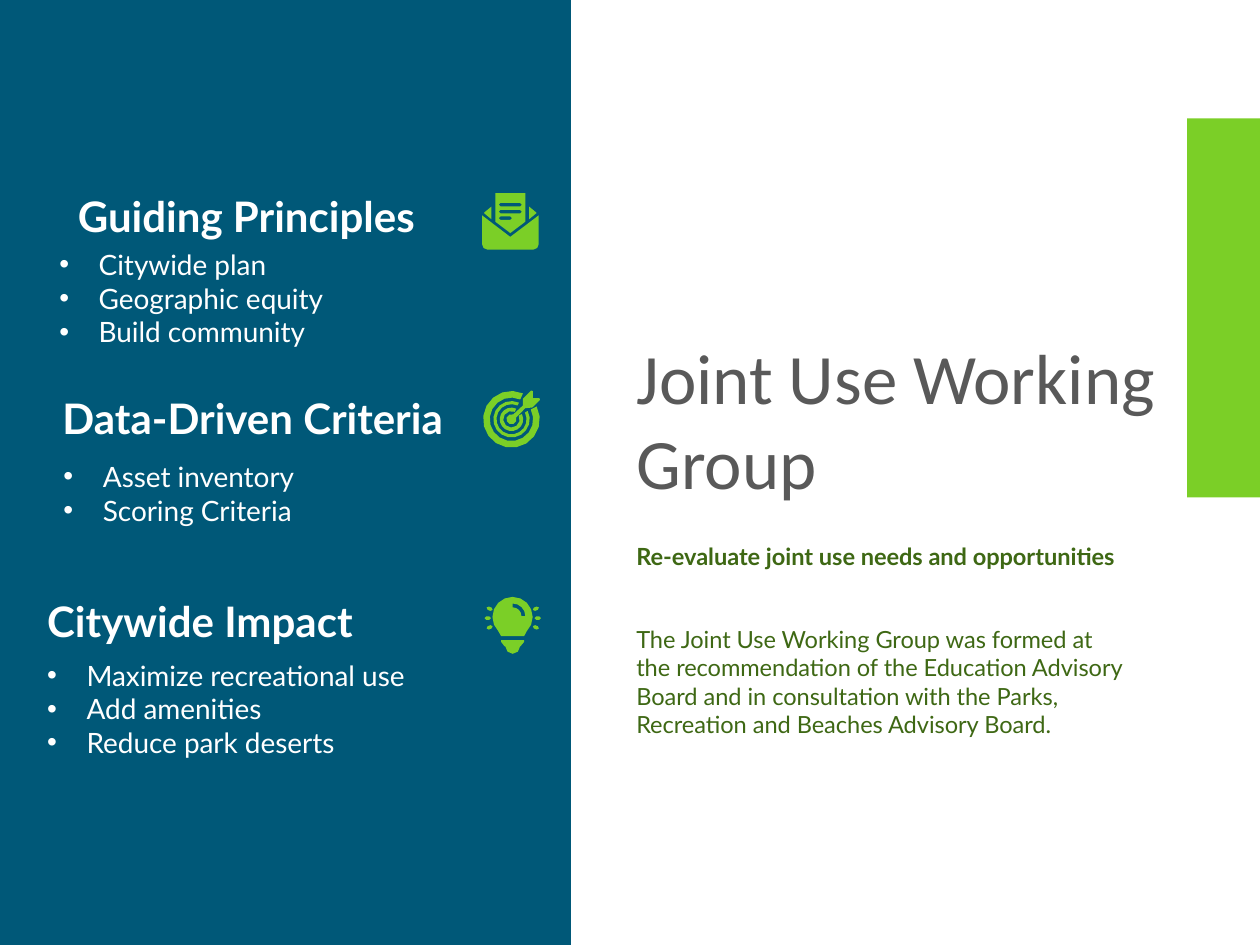
import math

import lxml.etree
import pptx
import pptx.dml.color
import pptx.enum.shapes
import pptx.enum.text
import pptx.oxml.ns
import pptx.util

Pt = pptx.util.Pt
rgb = pptx.dml.color.RGBColor.from_string
LEFT = pptx.enum.text.PP_ALIGN.LEFT
RIGHT = pptx.enum.text.PP_ALIGN.RIGHT
NAVY, GREEN, DARK_GREEN, GREY, WHITE = "005878", "7BCF27", "3E6814", "595959", "FFFFFF"


def arc(x, y, radius, start, end):
    step_angle = 90 if radius < 2 else 45 if radius < 5 else 22.5
    steps = math.ceil(abs(end - start) / step_angle)
    angles = [math.radians(start + (end - start) * step / steps) for step in range(steps + 1)]
    return [(x + radius * math.cos(angle), y + radius * math.sin(angle)) for angle in angles]


def fill_text(shape, box, lines, size, color, font="Lato", bold=False, align=LEFT, bullets=False):
    shape.left, shape.top, shape.width, shape.height = [Pt(length) for length in box]
    frame = shape.text_frame
    frame.word_wrap = True
    frame.vertical_anchor = pptx.enum.text.MSO_ANCHOR.TOP
    frame.text = "\n".join(lines)
    for paragraph in frame.paragraphs:
        paragraph.alignment = align
        if bullets:
            properties = paragraph._p.get_or_add_pPr()
            properties.set("marL", str(Pt(22.5)))
            properties.set("indent", str(Pt(-22.5)))
            for tag, name, value in [("a:buFont", "typeface", "Arial"), ("a:buChar", "char", "•")]:
                lxml.etree.SubElement(properties, pptx.oxml.ns.qn(tag)).set(name, value)
        paragraph.font.name = font
        paragraph.font.size = Pt(size)
        paragraph.font.bold = bold
        paragraph.font.color.rgb = rgb(color)


presentation = pptx.Presentation()
presentation.slide_width = Pt(720)
presentation.slide_height = Pt(540)
slide = presentation.slides.add_slide(presentation.slide_layouts[5])

for box, color in [((0, 0, 326.2, 540), NAVY), ((678.3, 67.6, 41.7, 216.6), GREEN)]:
    panel = slide.shapes.add_shape(
        pptx.enum.shapes.MSO_SHAPE.RECTANGLE, *[Pt(length) for length in box])
    panel.shadow.inherit = False
    panel.fill.solid()
    panel.fill.fore_color.rgb = rgb(color)
    panel.line.fill.background()

fill_text(slide.shapes.title, (356.5, 187.2, 332.6, 105.2),
          ["Joint Use Working Group"], 40.5, GREY, font="Calibri")

statements = [
    ((356.5, 306, 345.6, 23.8), "Re-evaluate joint use needs and opportunities", True),
    ((356.5, 353.5, 293.8, 72.7),
     "The Joint Use Working Group was formed at the recommendation of the Education Advisory "
     "Board and in consultation with the Parks, Recreation and Beaches Advisory Board.", False),
]
for box, text, bold in statements:
    fill_text(slide.shapes.add_textbox(0, 0, 0, 0), box, [text], 13.5, DARK_GREEN, bold=bold)

topics = [
    ("Guiding Principles", (-3.6, 105.5, 247.7, 36), RIGHT,
     ["Citywide plan", "Geographic equity", "Build community"], (26.8, 137.9, 193, 65.5)),
    ("Data-Driven Criteria", (-10.6, 220.6, 270.7, 36), RIGHT,
     ["Asset inventory", "Scoring Criteria"], (29.2, 259, 171.4, 46)),
    ("Citywide Impact", (19.9, 337, 310.3, 36), LEFT,
     ["Maximize recreational use", "Add amenities", "Reduce park deserts"],
     (19.9, 372.6, 240.5, 65.5)),
]
for heading, heading_box, align, items, items_box in topics:
    fill_text(slide.shapes.add_textbox(0, 0, 0, 0), heading_box, [heading], 24, WHITE,
              bold=True, align=align)
    fill_text(slide.shapes.add_textbox(0, 0, 0, 0), items_box, items, 16, WHITE, bullets=True)

letter_lines = [
    arc(286, y, 1, 90, 270) + arc(right, y, 1, -90, 90)
    for y, right in [(117, 297.2), (121, 297.2), (124.7, 291.6)]
]
envelope = [
    [[(275.5, 123.1), (291.6, 135.4), (307.8, 123.1)]
     + arc(304.9, 139.7, 2.9, 0, 90) + arc(278.4, 139.7, 2.9, 90, 180)],
    [[(302.4, 118.1), (302.4, 125.3), (306.7, 121.7)]],
    [[(280.8, 118.1), (280.8, 125.3), (276.5, 121.7)]],
    [[(283, 110.4), (300.2, 110.4), (300.2, 126.7), (291.6, 133.2), (283, 126.7)]]
    + letter_lines,
]

target = [
    [arc(292.3, 239.6, outer, -27, 294) + arc(292.3, 239.6, inner, 294, -27)]
    for outer, inner in [(16.2, 12.4), (10.4, 8.6), (6.7, 4.7)]
]
target.append([
    arc(292.3, 239.6, 2.9, -20, 290)
    + [(298.8, 231.8), (298.8, 227.9), (303.5, 223.2), (304.6, 223.5), (304.6, 227.5),
       (308.3, 227.5), (308.6, 228.6), (304.2, 232.9), (300.2, 233.3)]
])

bulb = [
    [arc(292.9, 352.6, 11.5, 135, 405) + [(299.5, 363.6), (286.4, 363.6)],
     arc(293, 352.1, 7.2, -90, 0) + arc(293, 352.1, 5, 0, -90)],
    [[(286.4, 365.8), (299.5, 365.8), (299.5, 366.8), (297.4, 369.4)]
     + arc(293, 369.4, 4.2, 0, 180) + [(288.4, 369.4), (286.4, 366.8)]],
]
for angle in (-22, 0, 22, 158, 180, 202):
    across, down = math.cos(math.radians(angle)), math.sin(math.radians(angle))
    bulb.append([
        arc(293 + 13.4 * across, 353.2 + 13.4 * down, 1, angle + 90, angle + 270)
        + arc(293 + 15.1 * across, 353.2 + 15.1 * down, 1, angle - 90, angle + 90)
    ])

for icon in (envelope, target, bulb):
    group = slide.shapes.add_group_shape()
    for contours in icon:
        scaled = [[(x * 100, y * 100) for x, y in contour] for contour in contours]
        builder = group.shapes.build_freeform(*scaled[0][0], scale=Pt(1) / 100)
        builder.add_line_segments(scaled[0][1:], close=True)
        for hole in scaled[1:]:
            builder.move_to(*hole[0])
            builder.add_line_segments(hole[1:], close=True)
        shape = builder.convert_to_shape()
        shape.shadow.inherit = False
        shape.fill.solid()
        shape.fill.fore_color.rgb = rgb(GREEN)
        shape.line.fill.background()

presentation.save("out.pptx")
